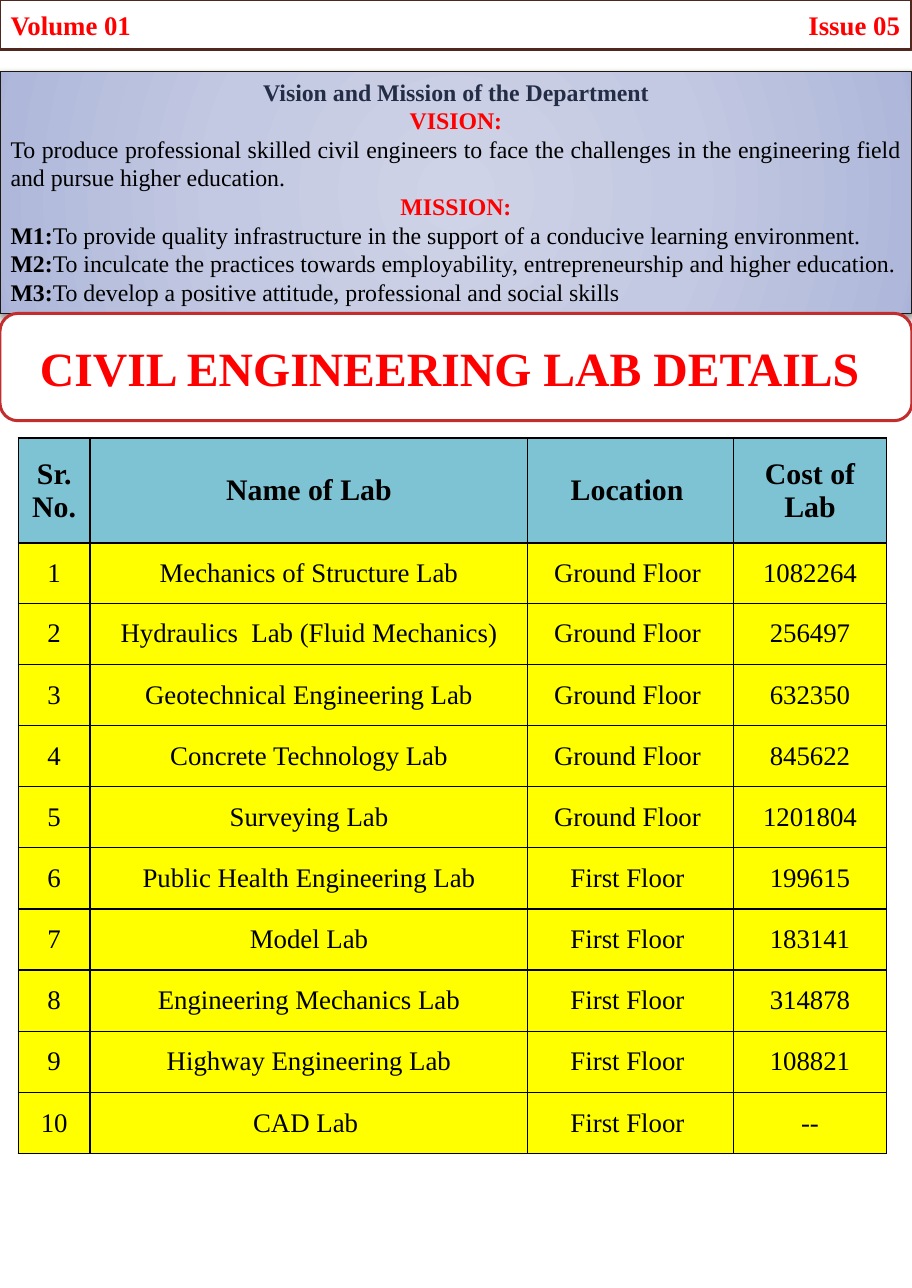
from dataclasses import dataclass

from lxml import etree
from pptx import Presentation
from pptx import util as u
from pptx.dml.color import RGBColor
from pptx.enum import shapes, text
from pptx.oxml import parse_xml
from pptx.oxml.ns import nsdecls, qn

PX = u.Inches(1) // 100
ALIGN, ANCHOR = text.PP_ALIGN, text.MSO_ANCHOR


@dataclass(frozen=True)
class Theme:
    """Colours, font and type sizes of the newsletter page."""
    font: str = "Times New Roman"
    red: str = "FF0000"
    black: str = "000000"
    white: str = "FFFFFF"
    navy: str = "242D46"
    brown: str = "4F271C"
    crimson: str = "C32D2E"
    panel_line: str = "1E190D"
    head_fill: str = "7EC3D4"
    row_fill: str = "FFFF00"
    gradient: tuple = ((0, "CFD3E7"), (50, "C3C9E2"), (97, "AFB8DA"), (100, "A8B2DA"))
    title: int = 32
    table_head: int = 20
    body: int = 18
    panel: int = 16


T = Theme()

MISSIONS = (
    "To provide quality infrastructure in the support of a conducive learning environment.",
    "To inculcate the practices towards employability, entrepreneurship and higher education.",
    "To develop a positive attitude, professional and social skills",
)
COLUMNS = (("Sr. No.", 67), ("Name of Lab", 408), ("Location ", 192), ("Cost of Lab", 142))
ROW_HEIGHTS = (98, 56) + (57,) * 9
GROUND, FIRST = "Ground Floor ", "First Floor "
LABS = (
    ("Mechanics of Structure Lab", GROUND, "1082264"),
    ("Hydraulics  Lab (Fluid Mechanics)", GROUND, "256497"),
    ("Geotechnical Engineering Lab", GROUND, "632350"),
    ("Concrete Technology Lab", GROUND, "845622"),
    ("Surveying Lab", GROUND, "1201804"),
    ("Public Health Engineering Lab", FIRST, "199615"),
    ("Model Lab", FIRST, "183141"),
    ("Engineering Mechanics Lab", FIRST, "314878"),
    ("Highway Engineering Lab", FIRST, "108821"),
    ("CAD Lab ", FIRST, "--"),
)


def rgb(color):
    """Turn a hex string into a colour."""
    return RGBColor.from_string(color)


def add_run(p, words, size=T.body, color=T.black, bold=False):
    """Append one formatted run to a paragraph."""
    r = p.add_run()
    r.text = words
    r.font.name, r.font.size, r.font.bold = T.font, u.Pt(size), bold
    r.font.color.rgb = rgb(color)


def add_box(s, kind, box, line, width):
    """Add a white, outlined shape without a shadow."""
    sp = s.shapes.add_shape(kind, *(v * PX for v in box))
    sp.shadow.inherit = False
    sp.fill.solid()
    sp.fill.fore_color.rgb = rgb(T.white)
    sp.line.color.rgb = rgb(line)
    sp.line.width = u.Pt(width)
    sp.text_frame.word_wrap = True
    return sp


def add_header(s):
    """Add the volume and issue bar, split by a right tab stop."""
    sp = add_box(s, shapes.MSO_SHAPE.RECTANGLE, (0, 0, 850, 46), T.brown, 2)
    p = sp.text_frame.paragraphs[0]
    p.alignment = ALIGN.LEFT
    tabs = etree.SubElement(p._p.get_or_add_pPr(), qn("a:tabLst"))
    etree.SubElement(tabs, qn("a:tab"), pos=str(829 * PX), algn="r")
    add_run(p, "Volume 01\tIssue 05", color=T.red, bold=True)


def style_panel(sp):
    """Give a shape a radial gradient and a soft shadow below."""
    stops = "".join(f'<a:gs pos="{pos * 1000}"><a:srgbClr val="{color}"/></a:gs>'
                    for pos, color in T.gradient)
    grad = parse_xml(
        f'<a:gradFill {nsdecls("a")} rotWithShape="1"><a:gsLst>{stops}</a:gsLst>'
        '<a:path path="circle"><a:fillToRect l="50000" t="50000" r="50000" b="50000"/>'
        '</a:path></a:gradFill>')
    pr = sp._element.spPr
    pr.replace(pr.find(qn("a:solidFill")), grad)
    pr.find(qn("a:effectLst")).append(parse_xml(
        f'<a:outerShdw {nsdecls("a")} blurRad="{u.Pt(5)}" dist="{u.Pt(2)}" dir="5400000" '
        f'rotWithShape="0"><a:srgbClr val="{T.black}"><a:alpha val="43000"/></a:srgbClr>'
        '</a:outerShdw>'))


def add_panel(s):
    """Add the vision and mission panel."""
    sp = add_box(s, shapes.MSO_SHAPE.RECTANGLE, (0, 67, 850, 225), T.panel_line, 0.75)
    style_panel(sp)
    tf = sp.text_frame
    tf.vertical_anchor = ANCHOR.TOP
    lines = [
        (ALIGN.CENTER, [("Vision and Mission of the Department", T.navy, True)]),
        (ALIGN.CENTER, [("VISION:", T.red, True)]),
        (ALIGN.JUSTIFY, [("To produce professional skilled civil engineers to face the challenges "
                          "in the engineering field and pursue higher education.", T.black, False)]),
        (ALIGN.CENTER, [("MISSION:", T.red, True)]),
    ]
    lines += [(ALIGN.JUSTIFY, [(f"M{n}:", T.black, True), (words, T.black, False)])
              for n, words in enumerate(MISSIONS, 1)]
    for i, (align, runs) in enumerate(lines):
        p = tf.add_paragraph() if i else tf.paragraphs[0]
        p.alignment = align
        for words, color, bold in runs:
            add_run(p, words, size=T.panel, color=color, bold=bold)


def add_title(s):
    """Add the rounded title banner."""
    sp = add_box(s, shapes.MSO_SHAPE.ROUNDED_RECTANGLE, (0, 292, 850, 100), T.crimson, 2)
    p = sp.text_frame.paragraphs[0]
    p.alignment = ALIGN.CENTER
    add_run(p, "CIVIL ENGINEERING LAB DETAILS ", size=T.title, color=T.red, bold=True)


def fill_cell(cell, words, fill, **fmt):
    """Write a centred, bordered and filled table cell."""
    pr = cell._tc.get_or_add_tcPr()
    for side in "LRTB":
        pr.append(parse_xml(
            f'<a:ln{side} {nsdecls("a")} w="{u.Pt(1)}"><a:solidFill><a:srgbClr val="{T.black}"/>'
            f'</a:solidFill></a:ln{side}>'))
    cell.fill.solid()
    cell.fill.fore_color.rgb = rgb(fill)
    cell.vertical_anchor = ANCHOR.MIDDLE
    p = cell.text_frame.paragraphs[0]
    p.alignment = ALIGN.CENTER
    add_run(p, words, **fmt)


def add_lab_table(s):
    """Add the table of laboratories."""
    widths = [w for _, w in COLUMNS]
    frame = s.shapes.add_table(len(ROW_HEIGHTS), len(COLUMNS), 17 * PX, 408 * PX,
                               sum(widths) * PX, sum(ROW_HEIGHTS) * PX)
    table = frame.table
    table.horz_banding = False
    for column, width in zip(table.columns, widths):
        column.width = width * PX
    for row, height in zip(table.rows, ROW_HEIGHTS):
        row.height = height * PX
    for c, (name, _) in enumerate(COLUMNS):
        fill_cell(table.cell(0, c), name, T.head_fill, size=T.table_head, bold=True)
    for n, lab in enumerate(LABS, 1):
        for c, words in enumerate((str(n), *lab)):
            fill_cell(table.cell(n, c), words, T.row_fill)


def main():
    """Build the lab details page."""
    prs = Presentation()
    prs.slide_width, prs.slide_height = 850 * PX, 1200 * PX
    s = prs.slides.add_slide(prs.slide_layouts[6])
    add_header(s)
    add_panel(s)
    add_title(s)
    add_lab_table(s)
    prs.save("out.pptx")


if __name__ == "__main__":
    main()
